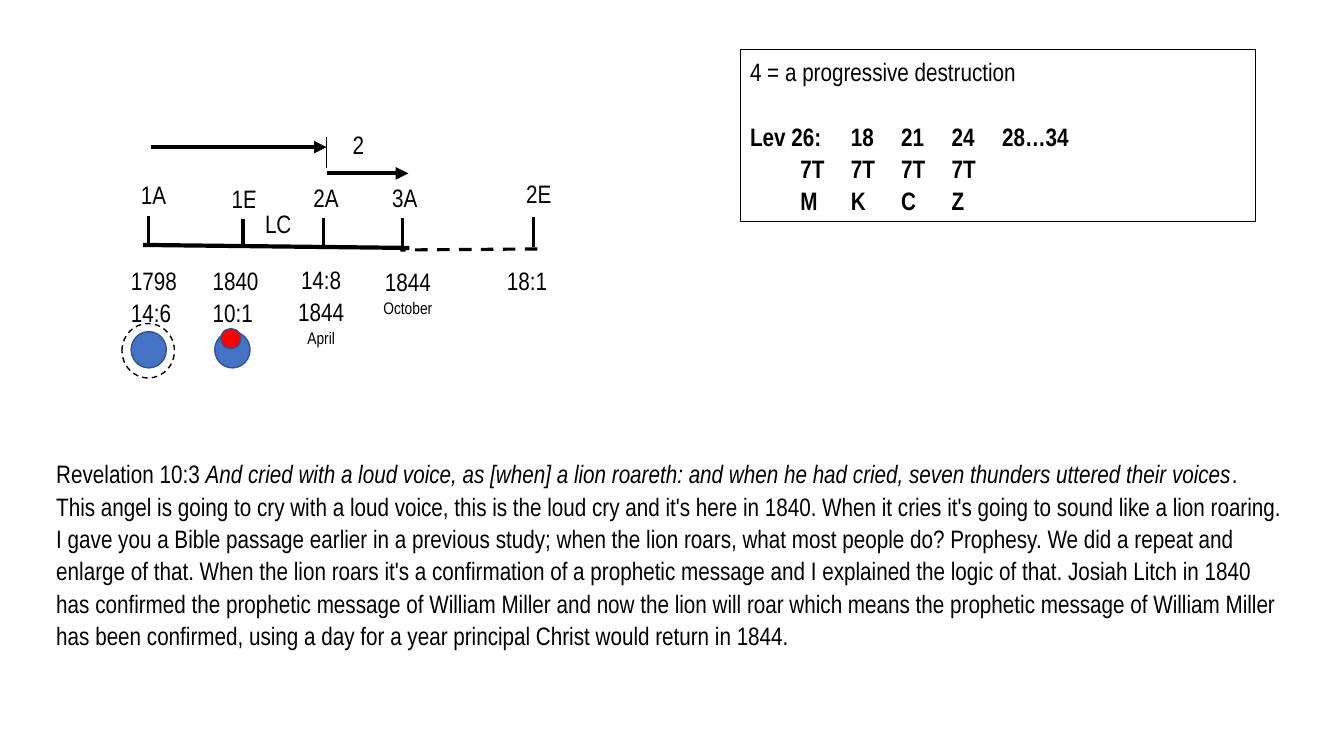
from lxml.etree import SubElement
from pptx import Presentation
from pptx.dml.color import RGBColor
from pptx.enum.dml import MSO_LINE
from pptx.enum.shapes import MSO_CONNECTOR, MSO_SHAPE
from pptx.enum.text import MSO_ANCHOR, MSO_AUTO_SIZE, PP_ALIGN
from pptx.oxml.ns import qn
from pptx.util import Inches, Pt

COLORS = {"black": "000000", "white": "FFFFFF", "blue": "4472C4",
          "navy": "325491", "red": "FF0000"}


class Painter:
    """Draws on one slide, on a grid of tenths of an inch."""

    font = "Arial Narrow"
    text_size = 18
    small_size = 12
    line_spacing = 1.07
    cell = Inches(0.1)
    row_heights = {18: 3.23, 12: 2.15}
    padding = 0.9

    def __init__(self, deck):
        self.page = deck.slides.add_slide(deck.slide_layouts[6])

    def grid(self, *cells):
        return [round(cell * self.cell) for cell in cells]

    def color(self, name):
        return RGBColor.from_string(COLORS[name])

    def outline(self, line, color, width, dashed=False):
        line.color.rgb = self.color(color)
        line.width = Pt(width)
        if dashed:
            line.dash_style = MSO_LINE.DASH

    def shape(self, kind, place, fill, line, width, dashed=False):
        shape = self.page.shapes.add_shape(kind, *self.grid(*place))
        shape.shadow.inherit = False
        if fill:
            shape.fill.solid()
            shape.fill.fore_color.rgb = self.color(fill)
        else:
            shape.fill.background()
        if line:
            self.outline(shape.line, line, width, dashed)
        else:
            shape.line.fill.background()
        return shape

    def circle(self, left, top, width, height, fill, line="navy", dashed=False):
        self.shape(MSO_SHAPE.OVAL, (left, top, width, height), fill, line, 1, dashed)

    def line(self, start, end, width, dashed=False, arrow=False):
        line = self.page.shapes.add_connector(
            MSO_CONNECTOR.STRAIGHT, *self.grid(*start, *end))
        self.outline(line.line, "black", width, dashed)
        if arrow:
            SubElement(line.line._get_or_add_ln(), qn("a:tailEnd"), type="triangle")
        SubElement(line._element.spPr, qn("a:effectLst"))

    def text(self, left, top, width, paras, line="white", align=PP_ALIGN.LEFT, rows=None):
        """Each para is a list of (text, format values) spans."""
        sizes = [spans[0][1].get("size", self.text_size) for spans in paras]
        if rows:
            sizes = [self.text_size] * rows
        height = self.padding + sum(self.row_heights[size] for size in sizes)
        box = self.shape(MSO_SHAPE.RECTANGLE, (left, top, width, height),
                         "white", line, 0.75)
        frame = box.text_frame
        frame_format = {"word_wrap": True, "vertical_anchor": MSO_ANCHOR.TOP,
                        "auto_size": MSO_AUTO_SIZE.SHAPE_TO_FIT_TEXT}
        for name, value in frame_format.items():
            setattr(frame, name, value)
        for index, spans in enumerate(paras):
            para = frame.add_paragraph() if index else frame.paragraphs[0]
            para.alignment = align
            para.line_spacing = self.line_spacing
            for words, changes in spans:
                span = para.add_run()
                span.text = words
                values = {"name": self.font, "size": self.text_size} | changes
                values["size"] = Pt(values["size"])
                for name, value in values.items():
                    setattr(span.font, name, value)
                span.font.color.rgb = self.color("black")
        return box


PASSAGE = [
    [("Revelation 10:3 ", {}),
     ("And cried with a loud voice, as [when] a lion roareth: and when he had cried, "
      "seven thunders uttered their voices", {"italic": True}),
     (".", {})],
    [("This angel is going to cry with a loud voice, this is the loud cry and it's here "
      "in 1840. When it cries it's going to sound like a lion roaring. I gave you a Bible "
      "passage earlier in a previous study; when the lion roars, what most people do? "
      "Prophesy. We did a repeat and enlarge of that. When the lion roars it's a "
      "confirmation of a prophetic message and I explained the logic of that. Josiah Litch "
      "in 1840 has confirmed the prophetic message of William Miller and now the lion will "
      "roar which means the prophetic message of William Miller has been confirmed, using "
      "a day for a year principal Christ would return in 1844.", {})],
]

# Tick column and top row
TICKS = [(14.7, 21.4), (24.1, 21.2), (32.1, 21.4), (39.9, 21.5), (52.9, 21.5)]
TICK_LENGTH = 3.05

# Label, left column, top row
LABELS = [("1A", 13, 17.1), ("2A", 30.1, 17.4), ("3A", 37.9, 17.4),
          ("2E", 51.2, 17), ("1E", 22, 17.5)]
LATE_LABELS = [("2", 34, 12.1), ("LC", 25.3, 20)]
LABEL_WIDTH = 5.1

# Date lines, month, left column, top row
DATES = [(["1798", "14:6"], None, 12, 25.6), (["1840", "10:1"], None, 20.1, 25.6),
         (["14:8", "1844"], "April", 27.8, 25.5), (["1844"], "October", 36.4, 25.7),
         (["18:1"], None, 49.3, 25.6)]
DATE_WIDTH = 8.1

LEVITICUS = ["Lev 26:\t18\t21\t24\t28…34", "\t7T\t7T\t7T\t7T", "\tM\tK\tC\tZ"]


def main():
    deck = Presentation()
    deck.slide_width, deck.slide_height = Inches(13.33), Inches(7.5)
    painter = Painter(deck)

    # Passage
    painter.text(4.6, 44.8, 124, PASSAGE, line=None, rows=6)

    # Time line with its ticks
    painter.line((40.6, 24.6), (14.2, 24.3), 3)
    painter.line((53.3, 24.7), (39.7, 24.8), 2.25, dashed=True)
    for column, row in TICKS:
        painter.line((column, row), (column, row + TICK_LENGTH), 2.25)

    # Labels above and dates below
    for label, left, top in LABELS:
        painter.text(left, top, LABEL_WIDTH, [[(label, {})]])
    for lines, month, left, top in DATES:
        paras = [[(line, {})] for line in lines]
        if month:
            paras.append([(month, {"size": painter.small_size})])
        align = PP_ALIGN.CENTER if month else PP_ALIGN.LEFT
        painter.text(left, top, DATE_WIDTH, paras, align=align)

    # Angels
    for left in (13, 21.3):
        painter.circle(left, 32.9, 3.5, 3.6, "blue")
    painter.circle(12.1, 32.1, 5.2, 5.4, None, "black", dashed=True)
    painter.circle(21.9, 32.6, 2, 2, "red")

    # Arrows between the periods
    painter.line((15, 14.6), (32.4, 14.6), 3, arrow=True)
    painter.line((32.4, 13.6), (32.4, 16.7), 0.5)
    painter.line((32.4, 17.2), (40.5, 17.2), 3, arrow=True)
    for label, left, top in LATE_LABELS:
        painter.text(left, top, LABEL_WIDTH, [[(label, {})]])

    # Leviticus box, with a line's gap under its heading
    paras = [[("4 = a progressive destruction", {})]]
    paras += [[(line, {"bold": True})] for line in LEVITICUS]
    box = painter.text(73.4, 4.9, 51.1, paras, line="black", rows=5)
    box.text_frame.paragraphs[1].space_before = Pt(23)

    deck.save("out.pptx")


if __name__ == "__main__":
    main()
